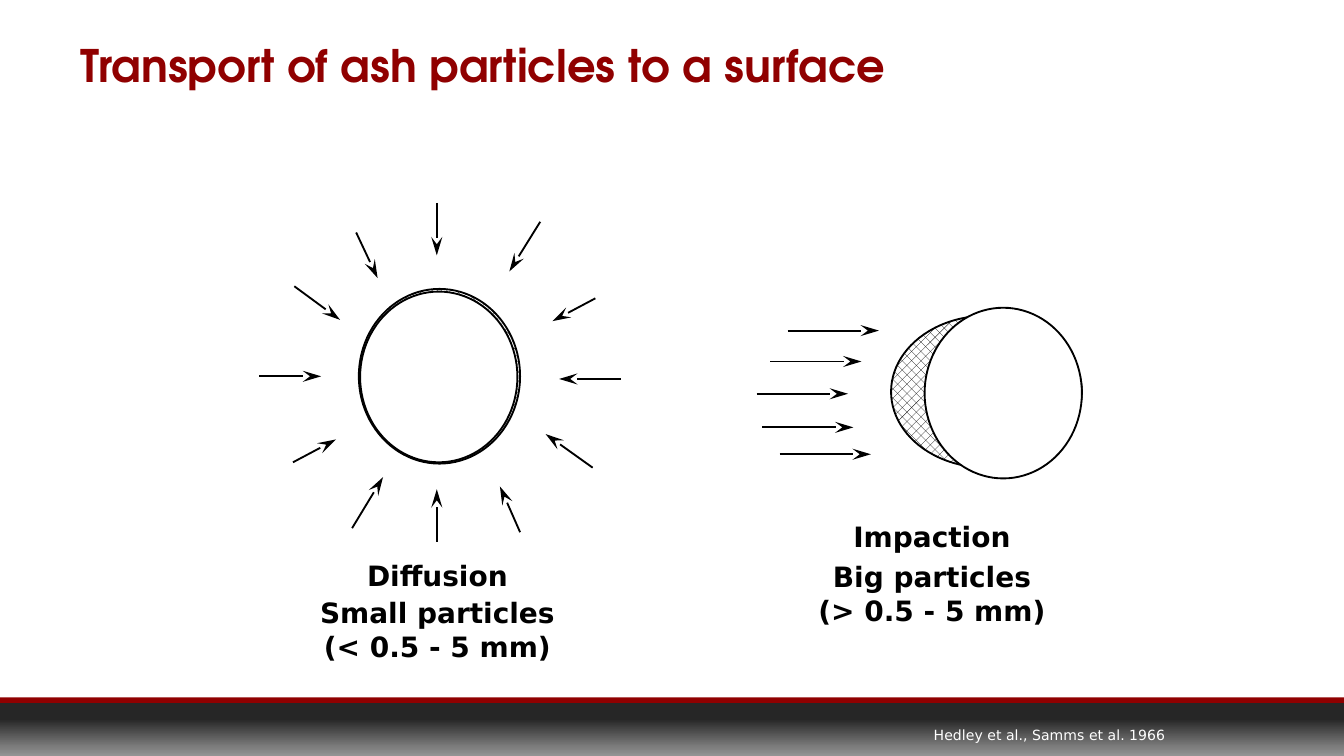
from copy import deepcopy

from lxml import etree
from pptx import Presentation
from pptx.dml.color import RGBColor
from pptx.enum.dml import MSO_PATTERN
from pptx.enum.shapes import MSO_CONNECTOR, MSO_SHAPE
from pptx.enum.text import MSO_ANCHOR, PP_ALIGN
from pptx.oxml.ns import qn
from pptx.util import Inches, Pt

RECTANGLE, OVAL = MSO_SHAPE.RECTANGLE, MSO_SHAPE.OVAL
STRAIGHT = MSO_CONNECTOR.STRAIGHT
DOTTED = MSO_PATTERN.PERCENT_50
MIDDLE, BOTTOM = MSO_ANCHOR.MIDDLE, MSO_ANCHOR.BOTTOM
LEFT, CENTER, RIGHT = PP_ALIGN.LEFT, PP_ALIGN.CENTER, PP_ALIGN.RIGHT

BODY_FONT, TITLE_FONT = "DejaVu Sans", "TeX Gyre Adventor"
RED, BLACK, WHITE = "900000", "000000", "FFFFFF"
FOOTER_STOPS = [(0.30, "262626"), (0.83, "7E7E7E"), (1.0, "969696")]

DIFFUSION_ARROWS = [
    ((0, 1.29), (0.46, 1.29)), ((2.69, 1.31), (2.23, 1.31)),
    ((1.32, 2.52), (1.32, 2.13)), ((1.32, 0), (1.32, 0.39)),
    ((2.48, 1.97), (2.13, 1.72)), ((1.94, 2.45), (1.79, 2.11)),
    ((0.26, 0.62), (0.6, 0.87)), ((0.72, 0.22), (0.88, 0.56)),
    ((2.5, 0.71), (2.18, 0.88)), ((2.09, 0.14), (1.86, 0.51)),
    ((0.69, 2.42), (0.92, 2.04)), ((0.25, 1.93), (0.57, 1.76)),
]
IMPACTION_STARTS = [(0.23, 0.17), (0.1, 0.4), (0, 0.64), (0.04, 0.89), (0.17, 1.09)]
IMPACTION_LENGTH = 0.68


def color(hex_code):
    """Return the colour for a hex string."""
    return RGBColor.from_string(hex_code)


def add_shape(slide, preset, box):
    """Add a preset shape without shadow or line."""
    shape = slide.shapes.add_shape(preset, *map(Inches, box))
    shape.shadow.inherit = False
    shape.line.fill.background()
    return shape


def add_ellipse(slide, box, dotted=False):
    """Add a black-outlined ellipse, white or dotted inside."""
    ellipse = add_shape(slide, OVAL, box)
    if dotted:
        ellipse.fill.patterned()
        ellipse.fill.pattern = DOTTED
        ellipse.fill.fore_color.rgb = color(BLACK)
        ellipse.fill.back_color.rgb = color(WHITE)
    else:
        ellipse.fill.solid()
        ellipse.fill.fore_color.rgb = color(WHITE)
    ellipse.line.color.rgb = color(BLACK)
    ellipse.line.width = Pt(1)


def add_arrow(slide, start, tip):
    """Add a thin black arrow with a stealth head at its tip."""
    arrow = slide.shapes.add_connector(STRAIGHT, *map(Inches, (*start, *tip)))
    arrow.line.color.rgb = color(BLACK)
    arrow.line.width = Pt(1)
    properties = arrow._element.spPr
    etree.SubElement(properties.find(qn("a:ln")), qn("a:tailEnd"),
                     type="stealth", w="med", len="lg")
    etree.SubElement(properties, qn("a:effectLst"))


def add_text(slide, box, lines, size, hex_code, align, font=BODY_FONT, bold=False,
             anchor=MIDDLE, wrap=False, margins=(0.08, 0.04, 0.08, 0.04)):
    """Add a text box with one paragraph for each line."""
    frame = slide.shapes.add_textbox(*map(Inches, box)).text_frame
    frame.word_wrap = wrap
    frame.vertical_anchor = anchor
    (frame.margin_left, frame.margin_top,
     frame.margin_right, frame.margin_bottom) = map(Inches, margins)
    frame.text = "\n".join(lines)
    for paragraph in frame.paragraphs:
        paragraph.alignment = align
        for run in paragraph.runs:
            run.font.size = Pt(size)
            run.font.name = font
            run.font.bold = bold
            run.font.color.rgb = color(hex_code)
    return frame


def add_caption(slide, box, lines, gap):
    """Add a bold caption with a gap below its heading."""
    frame = add_text(slide, box, lines, 15, BLACK, CENTER, bold=True)
    frame.paragraphs[1].space_before = Pt(gap)


def add_title(slide, box):
    """Add the slide title."""
    add_text(slide, box, ["Transport of ash particles to a surface"], 24, RED, LEFT,
             font=TITLE_FONT, bold=True, anchor=BOTTOM, wrap=True,
             margins=(0.1, 0.05, 0.1, 0))


def add_footer(slide, box):
    """Add the red rule, the gradient band and the citation."""
    left, top, width, height = box
    rule = add_shape(slide, RECTANGLE, (left, top, width, 0.04))
    rule.fill.solid()
    rule.fill.fore_color.rgb = color(RED)
    band = add_shape(slide, RECTANGLE, (left, top + 0.04, width, height - 0.04))
    band.fill.gradient()
    band.fill.gradient_angle = 270
    stop_list = band._element.spPr.find(".//" + qn("a:gsLst"))
    stop_list.append(deepcopy(stop_list[0]))
    for stop, (position, hex_code) in zip(band.fill.gradient_stops, FOOTER_STOPS):
        stop.position = position
        stop.color.rgb = color(hex_code)
    add_text(slide, (left + 6.48, top + 0.12, 2.27, 0.31),
             ["Hedley et al., Samms et al. 1966"], 7.5, WHITE, RIGHT)


def add_diffusion(slide, left, top):
    """Add the particle ringed by inward arrows, with its caption."""
    add_ellipse(slide, (left + 0.74, top + 0.64, 1.2, 1.3), dotted=True)
    add_ellipse(slide, (left + 0.75, top + 0.66, 1.17, 1.27))
    for start, tip in DIFFUSION_ARROWS:
        add_arrow(slide, (left + start[0], top + start[1]),
                  (left + tip[0], top + tip[1]))
    add_caption(slide, (left + 0.14, top + 2.55, 2.37, 0.97),
                ["Diffusion", "Small particles", "(< 0.5 - 5 mm)"], 2)


def add_impaction(slide, left, top):
    """Add the particle with a deposit facing the flow, with its caption."""
    add_ellipse(slide, (left + 1, top + 0.06, 1.42, 1.13), dotted=True)
    add_ellipse(slide, (left + 1.25, top, 1.17, 1.27))
    for x, y in IMPACTION_STARTS:
        add_arrow(slide, (left + x, top + y), (left + x + IMPACTION_LENGTH, top + y))
    add_caption(slide, (left + 0.27, top + 1.53, 2.07, 0.89),
                ["Impaction", "Big particles", "(> 0.5 - 5 mm)"], 3.5)


def main():
    """Build and save the slide."""
    presentation = Presentation()
    presentation.slide_width = Inches(10)
    presentation.slide_height = Inches(10 * 9 / 16)
    slide = presentation.slides.add_slide(presentation.slide_layouts[6])
    add_footer(slide, (0, 5.19, 10, 0.44))
    add_diffusion(slide, 1.93, 1.51)
    add_impaction(slide, 5.63, 2.29)
    add_title(slide, (0.5, 0.23, 9, 0.45))
    presentation.save("out.pptx")


if __name__ == "__main__":
    main()
